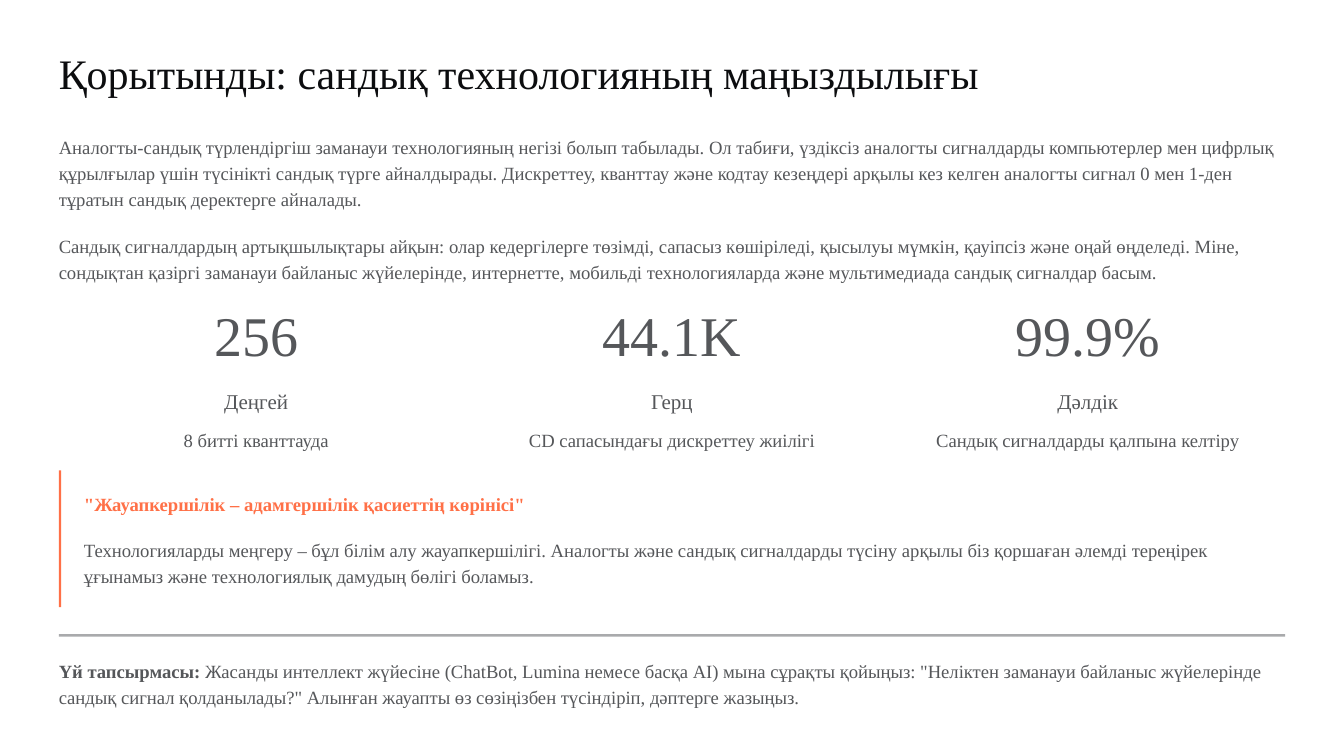
from lxml import etree
from pptx import Presentation
from pptx.dml.color import RGBColor
from pptx.enum.shapes import MSO_SHAPE
from pptx.enum.text import PP_ALIGN
from pptx.oxml.ns import qn
from pptx.util import Inches, Pt

RECTANGLE = MSO_SHAPE.RECTANGLE
LEFT, CENTER = PP_ALIGN.LEFT, PP_ALIGN.CENTER
WHITE = RGBColor(0xFF, 0xFF, 0xFF)
INK = RGBColor(0x0C, 0x0D, 0x0F)
GRAY = RGBColor(0x55, 0x57, 0x5A)
ORANGE = RGBColor(0xFF, 0x70, 0x47)
FONT = "Times New Roman"

SLIDE_WIDTH, SLIDE_HEIGHT = 16, 9
MARGIN = 0.7
CONTENT_WIDTH = SLIDE_WIDTH - 2 * MARGIN
COLUMN_GAP = 0.25
LINE = 0.32
RULE = 0.03

TITLE = "Қорытынды: сандық технологияның маңыздылығы"
SUMMARY = [
    "Аналогты-сандық түрлендіргіш заманауи технологияның негізі болып табылады. "
    "Ол табиғи, үздіксіз аналогты сигналдарды компьютерлер мен цифрлық құрылғылар "
    "үшін түсінікті сандық түрге айналдырады. Дискреттеу, кванттау және кодтау "
    "кезеңдері арқылы кез келген аналогты сигнал 0 мен 1-ден тұратын сандық "
    "деректерге айналады.",
    "Сандық сигналдардың артықшылықтары айқын: олар кедергілерге төзімді, сапасыз "
    "көшіріледі, қысылуы мүмкін, қауіпсіз және оңай өңделеді. Міне, сондықтан "
    "қазіргі заманауи байланыс жүйелерінде, интернетте, мобильді технологияларда "
    "және мультимедиада сандық сигналдар басым.",
]
STATISTICS = [
    ("256", "Деңгей", "8 битті кванттауда"),
    ("44.1K", "Герц", "CD сапасындағы дискреттеу жиілігі"),
    ("99.9%", "Дәлдік", "Сандық сигналдарды қалпына келтіру"),
]
QUOTE = '"Жауапкершілік – адамгершілік қасиеттің көрінісі"'
QUOTE_TEXT = (
    "Технологияларды меңгеру – бұл білім алу жауапкершілігі. Аналогты және сандық "
    "сигналдарды түсіну арқылы біз қоршаған әлемді тереңірек ұғынамыз және "
    "технологиялық дамудың бөлігі боламыз."
)
HOMEWORK_LABEL = "Үй тапсырмасы:"
HOMEWORK = (
    " Жасанды интеллект жүйесіне (ChatBot, Lumina немесе басқа AI) мына сұрақты "
    'қойыңыз: "Неліктен заманауи байланыс жүйелерінде сандық сигнал қолданылады?" '
    "Алынған жауапты өз сөзіңізбен түсіндіріп, дәптерге жазыңыз."
)


def add_text(slide, box, text, size=16, spacing=22.5, color=GRAY, bold=False, align=LEFT):
    """Add a one-paragraph text box without insets and return its paragraph."""
    frame = slide.shapes.add_textbox(*map(Inches, box)).text_frame
    frame.margin_left = frame.margin_right = frame.margin_top = frame.margin_bottom = 0
    frame.word_wrap = True
    frame.text = text
    paragraph = frame.paragraphs[0]
    paragraph.alignment = align
    paragraph.line_spacing = Pt(spacing)
    paragraph.font.name = FONT
    paragraph.font.size = Pt(size)
    paragraph.font.color.rgb = color
    paragraph.font.bold = bold
    return paragraph


def add_bar(slide, box, color):
    """Add a plain filled bar and return it."""
    bar = slide.shapes.add_shape(RECTANGLE, *map(Inches, box))
    bar.shadow.inherit = False
    bar.fill.solid()
    bar.fill.fore_color.rgb = color
    bar.line.fill.background()
    return bar


def add_summary(slide, box):
    """Place the two summary paragraphs, three lines and two lines high."""
    left, top, width, height = box
    add_text(slide, (left, top, width, 3 * LINE), SUMMARY[0])
    add_text(slide, (left, top + height - 2 * LINE, width, 2 * LINE), SUMMARY[1])


def add_statistics(slide, box):
    """Place the statistics in equal columns."""
    left, top, width, height = box
    count = len(STATISTICS)
    column_width = (width - (count - 1) * COLUMN_GAP) / count
    for index, (number, label, note) in enumerate(STATISTICS):
        column = left + index * (column_width + COLUMN_GAP)
        add_text(slide, (column, top, column_width, 0.66), number, 48, 47, align=CENTER)
        add_text(slide, (column, top + 0.9, column_width, LINE), label, 18, 22, align=CENTER)
        add_text(slide, (column, top + height - LINE, column_width, LINE), note, align=CENTER)


def add_quote(slide, box):
    """Place the quotation and its explanation beside an accent bar."""
    left, top, width, height = box
    indent, padding = 0.3, 0.22
    text_left, text_width = left + indent, width - indent
    add_text(slide, (text_left, top + padding, text_width, LINE), QUOTE, color=ORANGE, bold=True)
    text_top = top + height - padding - 2 * LINE
    add_text(slide, (text_left, text_top, text_width, 2 * LINE), QUOTE_TEXT)
    add_bar(slide, (left, top, RULE, height), ORANGE)


def add_homework(slide, box):
    """Place the half-transparent rule with the homework below it."""
    left, top, width, height = box
    rule = add_bar(slide, (left, top, width, RULE), GRAY)
    color = rule.fill._xPr.find(qn("a:solidFill"))[0]
    etree.SubElement(color, qn("a:alpha"), val="50000")
    text_box = (left, top + height - 2 * LINE, width, 2 * LINE)
    paragraph = add_text(slide, text_box, HOMEWORK_LABEL)
    paragraph.runs[0].font.bold = True
    paragraph.add_run().text = HOMEWORK


def main():
    """Build the conclusion slide and save it."""
    presentation = Presentation()
    presentation.slide_width = Inches(SLIDE_WIDTH)
    presentation.slide_height = Inches(SLIDE_HEIGHT)
    slide = presentation.slides.add_slide(presentation.slide_layouts[6])
    slide.background.fill.solid()
    slide.background.fill.fore_color.rgb = WHITE

    add_text(slide, (MARGIN, 0.55, CONTENT_WIDTH, 0.62), TITLE, 36, 44.5, INK)
    add_summary(slide, (MARGIN, 1.57, CONTENT_WIDTH, 1.82))
    add_statistics(slide, (MARGIN, 3.72, CONTENT_WIDTH, 1.66))
    add_quote(slide, (MARGIN, 5.6, CONTENT_WIDTH, 1.63))
    add_homework(slide, (MARGIN, 7.55, CONTENT_WIDTH, 0.9))
    presentation.save("out.pptx")


if __name__ == "__main__":
    main()
